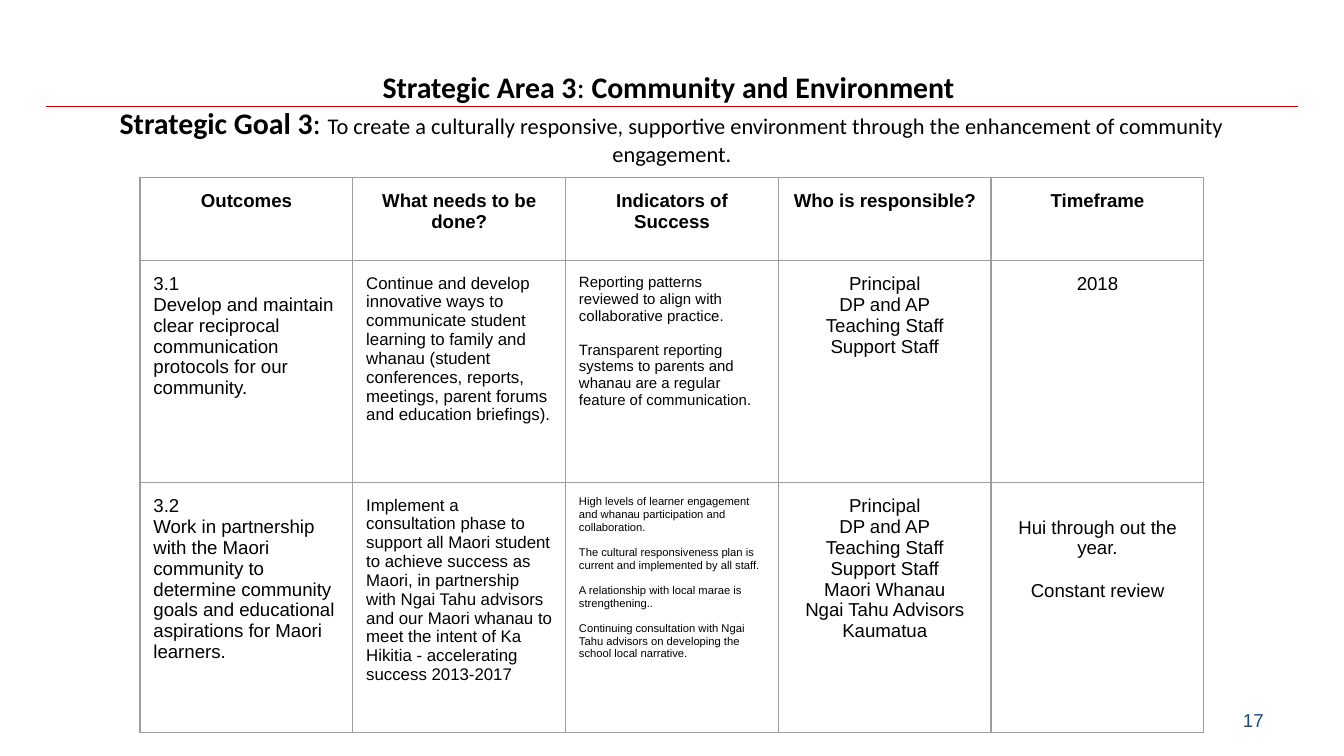
"""Build the Strategic Area 3 slide with its table of outcomes."""
from lxml import etree
from pptx import Presentation
from pptx.dml.color import RGBColor
from pptx.enum.shapes import MSO_CONNECTOR
from pptx.enum.text import MSO_ANCHOR, MSO_AUTO_SIZE, PP_ALIGN
from pptx.oxml import parse_xml
from pptx.oxml.ns import nsdecls, qn
from pptx.util import Pt

LEFT, MID, RIGHT = PP_ALIGN.LEFT, PP_ALIGN.CENTER, PP_ALIGN.RIGHT
TOP, HALF = MSO_ANCHOR.TOP, MSO_ANCHOR.MIDDLE
FIXED = MSO_AUTO_SIZE.NONE
STRAIGHT = MSO_CONNECTOR.STRAIGHT

HUES = {"ink": "000000", "rule": "C00000", "grid": "9E9E9E", "page": "1F497D"}
HEAD = [
    [("Strategic Area 3", 16, True), (": ", 16, False),
     ("Community and Environment ", 16, True)],
    [("Strategic Goal 3", 16, True), (": ", 16, False),
     ("To create a culturally responsive, supportive environment through "
      "the enhancement of community engagement.", 12, False)],
]
NAMES = ["Outcomes", "What needs to be done?", "Indicators of Success",
         "Who is responsible?", "Timeframe"]
STAFF = ["Principal", "DP and AP", "Teaching Staff", "Support Staff"]
GOALS = [
    [["3.1", "Develop and maintain clear reciprocal communication protocols "
      "for our community."],
     ["Continue and develop innovative ways to communicate student learning "
      "to family and whanau (student conferences, reports, meetings, parent "
      "forums and education briefings)."],
     ["Reporting patterns reviewed to align with collaborative practice.",
      "Transparent reporting systems to parents and whanau are a regular "
      "feature of communication."],
     STAFF,
     ["2018"]],
    [["3.2", "Work in partnership with the Maori community to determine "
      "community goals and educational aspirations for Maori learners."],
     ["Implement a consultation phase to support all Maori student to achieve "
      "success as Maori, in partnership with Ngai Tahu advisors and our Maori "
      "whanau to meet the intent of Ka Hikitia - accelerating success "
      "2013-2017"],
     ["High levels of learner engagement and whanau participation and "
      "collaboration.",
      "The cultural responsiveness plan is current and implemented by all "
      "staff.",
      "A relationship with local marae is strengthening..",
      "Continuing consultation with Ngai Tahu advisors on developing the "
      "school local narrative."],
     STAFF + ["Maori Whanau", "Ngai Tahu Advisors", "Kaumatua"],
     ["Hui through out the year.", "Constant review"]],
]
SIZES = [[10, 9, 8, 10, 10], [10, 9, 6, 10, 10]]
SIDES = [LEFT, LEFT, LEFT, MID, MID]
SPACED = (2, 4)
LINE = 1.15
PAD = 7.2
ROWS = [44.5, 119, 134]
WIDE = 114


def assign(thing, form):
    for key, value in form.items():
        setattr(thing, key, value)


def paint(font, size, bold=False, face="Arial", hue="ink"):
    assign(font, {"size": Pt(size), "bold": bold, "name": face})
    font.color.rgb = RGBColor.from_string(HUES[hue])


def margins(side, rise):
    return {"margin_left": Pt(side), "margin_right": Pt(side),
            "margin_top": Pt(rise), "margin_bottom": Pt(rise)}


def border(cell):
    props = cell._tc.get_or_add_tcPr()
    for spot, edge in enumerate("LRTB"):
        props.insert(spot, parse_xml(
            f'<a:ln{edge} {nsdecls("a")} w="9525"><a:solidFill>'
            f'<a:srgbClr val="{HUES["grid"]}"/></a:solidFill></a:ln{edge}>'))


def fill(cell, lines, size, side, bold=False, gap=0):
    assign(cell, margins(PAD, PAD))
    cell.fill.background()
    border(cell)
    frame = cell.text_frame
    frame.text = "\n".join(lines)
    for spot, para in enumerate(frame.paragraphs):
        para.alignment = side
        if spot and gap:
            para.space_before = Pt(gap)
        paint(para.runs[0].font, size, bold)


def add_rule(slide):
    rule = slide.shapes.add_connector(
        STRAIGHT, Pt(24.5), Pt(57), Pt(695.5), Pt(57))
    rule.line.color.rgb = RGBColor.from_string(HUES["rule"])
    rule.line.width = Pt(0.75)
    etree.SubElement(rule._element.spPr, qn("a:effectLst"))


def add_head(slide):
    title = slide.shapes.title
    assign(title, {"left": Pt(24.5), "top": Pt(29.5),
                   "width": Pt(671), "height": Pt(45.5)})
    frame = title.text_frame
    assign(frame, {**margins(PAD, PAD), "word_wrap": True,
                   "auto_size": FIXED, "vertical_anchor": TOP})
    para = frame.paragraphs[0]
    para.alignment = MID
    for spot, line in enumerate(HEAD):
        if spot:
            para.add_line_break()
        for text, size, bold in line:
            run = para.add_run()
            run.text = text
            paint(run.font, size, bold, "Calibri")


def add_grid(slide):
    table = slide.shapes.add_table(
        len(ROWS), len(NAMES), Pt(75), Pt(95),
        Pt(WIDE * len(NAMES)), Pt(sum(ROWS))).table
    assign(table, {"first_row": False, "horz_banding": False})
    for col in table.columns:
        col.width = Pt(WIDE)
    for row, high in zip(table.rows, ROWS):
        row.height = Pt(high)
    for col, name in enumerate(NAMES):
        fill(table.cell(0, col), [name], 10, MID, True)
    for row, goal in enumerate(GOALS):
        for col, lines in enumerate(goal):
            size = SIZES[row][col]
            gap = size * LINE if col in SPACED else 0
            fill(table.cell(row + 1, col), lines, size, SIDES[col], gap=gap)
    table.cell(2, 4).margin_top = Pt(PAD + 10 * LINE)


def add_page(slide):
    box = slide.shapes.add_textbox(Pt(516), Pt(375), Pt(168), Pt(21.5))
    frame = box.text_frame
    assign(frame, {**margins(PAD, 3.6), "word_wrap": True,
                   "vertical_anchor": HALF})
    para = frame.paragraphs[0]
    assign(para, {"text": "17", "alignment": RIGHT})
    paint(para.runs[0].font, 10, hue="page")


def main():
    deck = Presentation()
    assign(deck, {"slide_width": Pt(720), "slide_height": Pt(405)})
    slide = deck.slides.add_slide(deck.slide_layouts[5])
    for add in (add_rule, add_head, add_grid, add_page):
        add(slide)
    deck.save("out.pptx")


if __name__ == "__main__":
    main()
